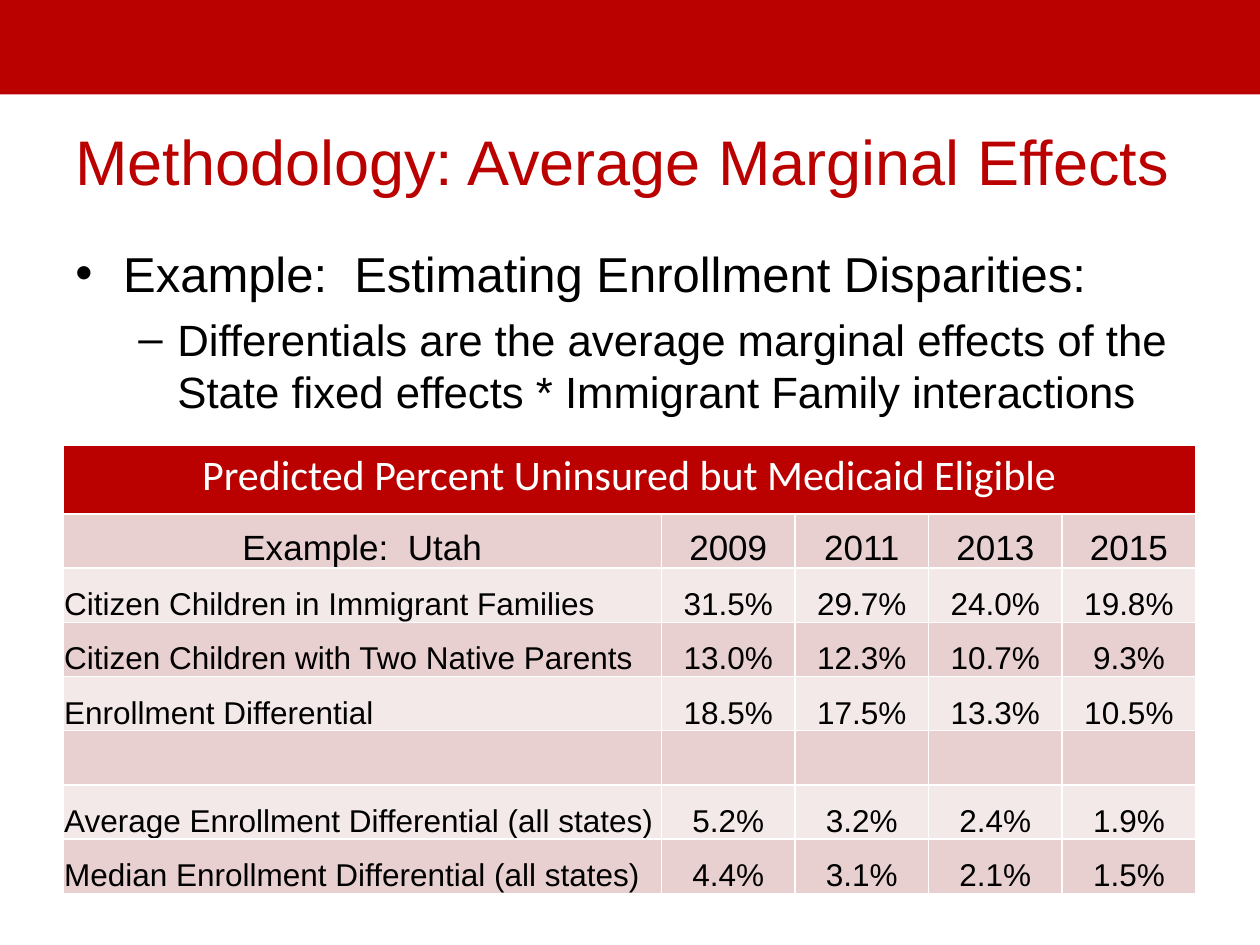
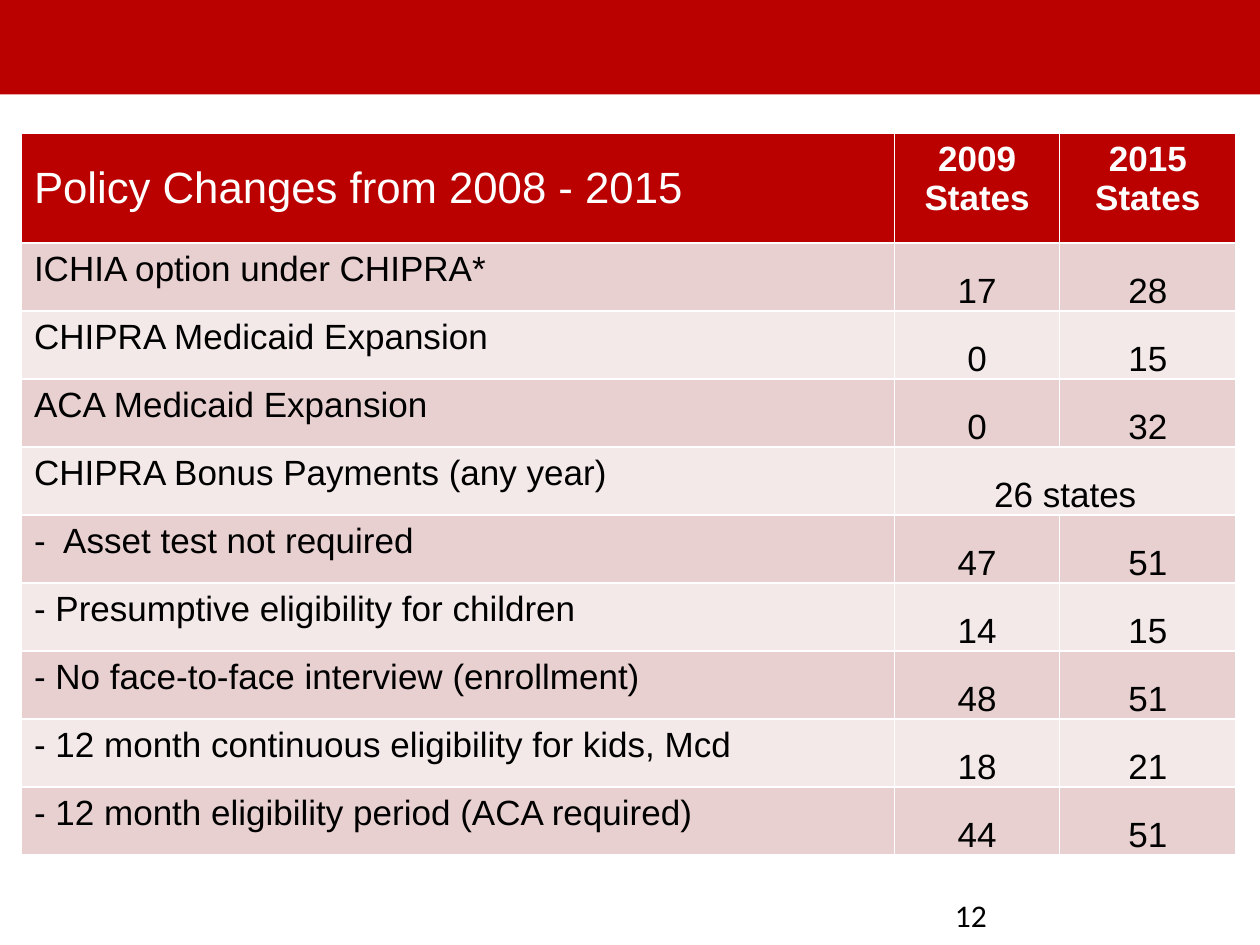
from dataclasses import dataclass, replace

from lxml import etree
from pptx import Presentation
from pptx.dml.color import RGBColor
from pptx.enum.shapes import MSO_SHAPE
from pptx.enum.text import MSO_ANCHOR, PP_ALIGN
from pptx.oxml.ns import qn
from pptx.util import Emu, Pt

# Enum members
LEFT, CENTER = PP_ALIGN.LEFT, PP_ALIGN.CENTER
TOP, MIDDLE, BOTTOM = MSO_ANCHOR.TOP, MSO_ANCHOR.MIDDLE, MSO_ANCHOR.BOTTOM
RECTANGLE = MSO_SHAPE.RECTANGLE

# Colours and fonts
RED = RGBColor(0xBB, 0x00, 0x00)
PINK = RGBColor(0xE8, 0xD0, 0xD0)
PALE = RGBColor(0xF4, 0xE9, 0xE9)
BLACK = RGBColor(0x00, 0x00, 0x00)
WHITE = RGBColor(0xFF, 0xFF, 0xFF)
SANS, HUMANIST = "Arial", "Calibri"

# 100 px to the inch
EMU_PER_PX = 9144
SLIDE_WIDTH, SLIDE_HEIGHT = 1000, 750
BLANK_LAYOUT = 6
PADDED = (10, 5, 10, 5)
TIGHT = (1, 1, 1, 0)


def px(length: int) -> Emu:
    return Emu(length * EMU_PER_PX)


@dataclass(frozen=True)
class TextStyle:
    size: int
    color: RGBColor = BLACK
    font: str = SANS
    bold: bool = False


@dataclass(frozen=True)
class CellStyle:
    text: TextStyle
    align: PP_ALIGN = CENTER
    anchor: MSO_ANCHOR = BOTTOM
    insets: tuple[int, int, int, int] = TIGHT


@dataclass(frozen=True)
class Bullet:
    text: str
    mark: str
    level: int
    size: int
    margin: int
    hanging: int
    space_before: int


@dataclass(frozen=True)
class TableRow:
    texts: tuple[str, ...]
    styles: tuple[CellStyle, ...]
    merge_from: int | None = None


@dataclass(frozen=True)
class TableLayout:
    left: int
    top: int
    columns: tuple[int, ...]
    header_height: int
    row_height: int


# Cell styles
VALUE = CellStyle(TextStyle(18))
VALUE_LABEL = replace(VALUE, align=LEFT)
YEAR = CellStyle(TextStyle(20))
POLICY = CellStyle(TextStyle(20), LEFT, TOP, PADDED)
TABLE_TITLE = CellStyle(TextStyle(24, WHITE, HUMANIST), CENTER, TOP, PADDED)
POLICY_TITLE = CellStyle(TextStyle(25, WHITE), LEFT, MIDDLE, PADDED)
STATES_TITLE = CellStyle(TextStyle(20, WHITE, bold=True), CENTER, TOP, PADDED)

# Slide content
BULLETS = (
    Bullet("Example:  Estimating Enrollment Disparities:", "•", 0, 28, 38, 38, 0),
    Bullet("Differentials are the average marginal effects of the State fixed "
           "effects * Immigrant Family interactions", "–", 1, 25, 81, 31, 6),
)
ENROLLMENT_LAYOUT = TableLayout(50, 353, (475,) + (106,) * 4, 55, 43)
ENROLLMENT_VALUES = (
    ("Citizen Children in Immigrant Families", "31.5%", "29.7%", "24.0%", "19.8%"),
    ("Citizen Children with Two Native Parents", "13.0%", "12.3%", "10.7%", "9.3%"),
    ("Enrollment Differential", "18.5%", "17.5%", "13.3%", "10.5%"),
    ("",) * 5,
    ("Average Enrollment Differential (all states)", "5.2%", "3.2%", "2.4%", "1.9%"),
    ("Median Enrollment Differential (all states)", "4.4%", "3.1%", "2.1%", "1.5%"),
)
POLICY_LAYOUT = TableLayout(17, 106, (693, 131, 140), 87, 54)
POLICY_VALUES = (
    ("ICHIA option under CHIPRA*", "17", "28"),
    ("CHIPRA Medicaid Expansion", "0", "15"),
    ("ACA Medicaid Expansion", "0", "32"),
    ("CHIPRA Bonus Payments (any year)", "26 states"),
    ("-  Asset test not required", "47", "51"),
    ("- Presumptive eligibility for children", "14", "15"),
    ("- No face-to-face interview (enrollment)", "48", "51"),
    ("- 12 month continuous eligibility for kids, Mcd", "18", "21"),
    ("- 12 month eligibility period (ACA required)", "44", "51"),
)


def format_runs(paragraph, style: TextStyle) -> None:
    for run in paragraph.runs:
        run.font.size = Pt(style.size)
        run.font.name = style.font
        run.font.bold = style.bold
        run.font.color.rgb = style.color


def add_banded_slide(presentation):
    """Add a slide with the red band across its top."""
    slide = presentation.slides.add_slide(presentation.slide_layouts[BLANK_LAYOUT])
    band = slide.shapes.add_shape(RECTANGLE, 0, 0, px(SLIDE_WIDTH), px(75))
    band.shadow.inherit = False
    band.fill.solid()
    band.fill.fore_color.rgb = RED
    band.line.fill.background()
    return slide


def add_text_frame(slide, left: int, top: int, width: int, height: int):
    box = slide.shapes.add_textbox(px(left), px(top), px(width), px(height))
    box.text_frame.word_wrap = True
    return box.text_frame


def add_label(slide, text: str, style: TextStyle,
              left: int, top: int, width: int, height: int) -> None:
    text_frame = add_text_frame(slide, left, top, width, height)
    text_frame.text = text
    format_runs(text_frame.paragraphs[0], style)


def add_bullets(slide, bullets: tuple[Bullet, ...],
                left: int, top: int, width: int, height: int) -> None:
    text_frame = add_text_frame(slide, left, top, width, height)
    for index, bullet in enumerate(bullets):
        paragraph = text_frame.add_paragraph() if index else text_frame.paragraphs[0]
        paragraph.text = bullet.text
        paragraph.level = bullet.level
        paragraph.space_before = Pt(bullet.space_before)
        properties = paragraph._p.get_or_add_pPr()
        properties.set("marL", str(px(bullet.margin)))
        properties.set("indent", str(-px(bullet.hanging)))
        etree.SubElement(properties, qn("a:buFont"), typeface=SANS)
        etree.SubElement(properties, qn("a:buChar"), char=bullet.mark)
        format_runs(paragraph, TextStyle(bullet.size))


def add_cell_borders(cell) -> None:
    properties = cell._tc.get_or_add_tcPr()
    for side in ("L", "R", "T", "B"):
        line = etree.SubElement(properties, qn(f"a:ln{side}"), w=str(Pt(1)))
        fill = etree.SubElement(line, qn("a:solidFill"))
        etree.SubElement(fill, qn("a:srgbClr"), val=str(WHITE))


def format_cell(cell, text: str, style: CellStyle, fill: RGBColor) -> None:
    add_cell_borders(cell)
    cell.fill.solid()
    cell.fill.fore_color.rgb = fill
    cell.vertical_anchor = style.anchor
    (cell.margin_left, cell.margin_top,
     cell.margin_right, cell.margin_bottom) = map(px, style.insets)
    cell.text_frame.text = text
    paragraph = cell.text_frame.paragraphs[0]
    paragraph.alignment = style.align
    format_runs(paragraph, style.text)


def add_table(slide, layout: TableLayout, rows: list[TableRow]) -> None:
    """Draw a red header row over rows in alternating tints."""
    heights = [layout.header_height] + [layout.row_height] * (len(rows) - 1)
    column_count = len(layout.columns)
    table = slide.shapes.add_table(
        len(rows), column_count, px(layout.left), px(layout.top),
        px(sum(layout.columns)), px(sum(heights))).table
    table.first_row = table.horz_banding = False
    for column, width in zip(table.columns, layout.columns):
        column.width = px(width)
    for row_index, (row, height) in enumerate(zip(rows, heights)):
        table.rows[row_index].height = px(height)
        fill = RED if row_index == 0 else PINK if row_index % 2 else PALE
        for column_index in range(column_count):
            text = row.texts[column_index] if column_index < len(row.texts) else ""
            style = row.styles[min(column_index, len(row.styles) - 1)]
            format_cell(table.cell(row_index, column_index), text, style, fill)
        if row.merge_from is not None:
            table.cell(row_index, row.merge_from).merge(
                table.cell(row_index, column_count - 1))


def build_methodology_slide(presentation) -> None:
    slide = add_banded_slide(presentation)
    add_bullets(slide, BULLETS, 50, 188, 900, 160)
    add_label(slide, "Methodology: Average Marginal Effects",
              TextStyle(36, RED), 50, 92, 917, 71)
    rows = [
        TableRow(("Predicted Percent Uninsured but Medicaid Eligible",),
                 (TABLE_TITLE,), merge_from=0),
        TableRow(("Example:  Utah", "2009", "2011", "2013", "2015"), (YEAR,)),
    ]
    rows += [TableRow(texts, (VALUE_LABEL, VALUE)) for texts in ENROLLMENT_VALUES]
    add_table(slide, ENROLLMENT_LAYOUT, rows)


def build_policy_slide(presentation) -> None:
    slide = add_banded_slide(presentation)
    rows = [TableRow(("Policy Changes from 2008 - 2015", "2009 States", "2015 States"),
                     (POLICY_TITLE, STATES_TITLE))]
    rows += [TableRow(texts, (POLICY, YEAR), 1 if len(texts) == 2 else None)
             for texts in POLICY_VALUES]
    add_table(slide, POLICY_LAYOUT, rows)
    add_label(slide, "12", TextStyle(18, font=HUMANIST), 748, 706, 225, 40)


def main() -> None:
    presentation = Presentation()
    presentation.slide_width = px(SLIDE_WIDTH)
    presentation.slide_height = px(SLIDE_HEIGHT)
    build_methodology_slide(presentation)
    build_policy_slide(presentation)
    presentation.save("out.pptx")


if __name__ == "__main__":
    main()
